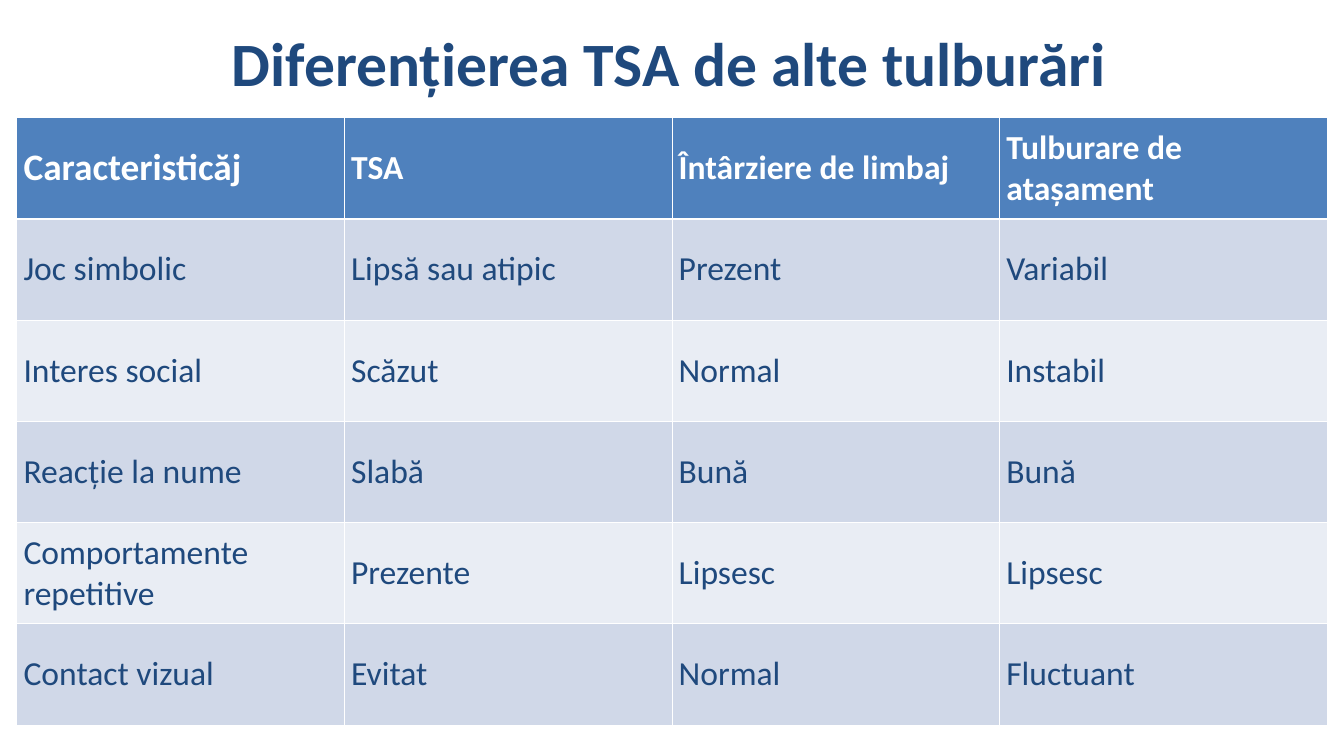
from dataclasses import dataclass

import lxml.etree
import pptx
import pptx.dml.color
import pptx.enum.text
import pptx.oxml.ns
import pptx.util

Inches = pptx.util.Inches
NAVY, WHITE, HEADER_BLUE = "1F497D", "FFFFFF", "4F81BD"
BAND_FILLS = ("D0D8E8", "E9EDF4")
TABLE_LEFT, TABLE_TOP, TABLE_WIDTH, TABLE_HEIGHT = 0.25, 1.75, 19.5, 9.04


@dataclass(frozen=True)
class Comparison:
    feature: str
    autism: str
    language_delay: str
    attachment_disorder: str

    def texts(self) -> tuple[str, ...]:
        return self.feature, self.autism, self.language_delay, self.attachment_disorder


COMPARISONS = [
    Comparison("Caracteristicăj", "TSA", "Întârziere de limbaj", "Tulburare de atașament"),
    Comparison("Joc simbolic", "Lipsă sau atipic", "Prezent", "Variabil"),
    Comparison("Interes social", "Scăzut", "Normal", "Instabil"),
    Comparison("Reacție la nume", "Slabă", "Bună", "Bună"),
    Comparison("Comportamente repetitive", "Prezente", "Lipsesc", "Lipsesc"),
    Comparison("Contact vizual", "Evitat", "Normal", "Fluctuant"),
]


def rgb(color: str) -> pptx.dml.color.RGBColor:
    return pptx.dml.color.RGBColor.from_string(color)


def write_text(text_frame, text: str, *, size: float, color: str = NAVY, bold: bool = False,
               align=pptx.enum.text.PP_ALIGN.LEFT) -> None:
    text_frame.word_wrap = True
    paragraph = text_frame.paragraphs[0]
    paragraph.alignment = align
    run = paragraph.add_run()
    run.text = text
    run.font.name = "Calibri"
    run.font.size = pptx.util.Pt(size)
    run.font.bold = bold
    run.font.color.rgb = rgb(color)


def set_borders(cell, widths: dict[str, float], color: str = WHITE) -> None:
    """Draw the cell edges; widths maps L, R, T and B, in that order, to points."""
    qn = pptx.oxml.ns.qn
    properties = cell._tc.get_or_add_tcPr()
    for index, (side, width) in enumerate(widths.items()):
        line = lxml.etree.Element(qn(f"a:ln{side}"), w=str(pptx.util.Pt(width)))
        fill = lxml.etree.SubElement(line, qn("a:solidFill"))
        lxml.etree.SubElement(fill, qn("a:srgbClr"), val=color)
        properties.insert(index, line)


def add_title(slide, text: str) -> None:
    title = slide.shapes.title
    title.left, title.top = Inches(0.5), Inches(0.3)
    title.width, title.height = Inches(18.92), Inches(1.25)
    title.text_frame.vertical_anchor = pptx.enum.text.MSO_ANCHOR.MIDDLE
    write_text(title.text_frame, text, size=66, bold=True,
               align=pptx.enum.text.PP_ALIGN.CENTER)


def add_comparison_table(slide, comparisons: list[Comparison]) -> None:
    table = slide.shapes.add_table(
        len(comparisons), len(comparisons[0].texts()), Inches(TABLE_LEFT), Inches(TABLE_TOP),
        Inches(TABLE_WIDTH), Inches(TABLE_HEIGHT)).table
    for row, comparison in enumerate(comparisons):
        is_header = row == 0
        for column, text in enumerate(comparison.texts()):
            cell = table.cell(row, column)
            cell.vertical_anchor = pptx.enum.text.MSO_ANCHOR.MIDDLE
            cell.fill.solid()
            cell.fill.fore_color.rgb = rgb(HEADER_BLUE if is_header else BAND_FILLS[(row - 1) % 2])
            write_text(cell.text_frame, text, size=40 if is_header and column == 0 else 36,
                       color=WHITE if is_header else NAVY, bold=is_header)
            set_borders(cell, {"L": 1, "R": 1, "T": 3 if row == 1 else 1,
                               "B": 3 if is_header else 1})


def main() -> None:
    presentation = pptx.Presentation()
    presentation.slide_width, presentation.slide_height = Inches(20), Inches(11.25)
    slide = presentation.slides.add_slide(presentation.slide_layouts.get_by_name("Title Only"))
    add_title(slide, "Diferențierea TSA de alte tulburări")
    add_comparison_table(slide, COMPARISONS)
    presentation.save("out.pptx")


if __name__ == "__main__":
    main()
